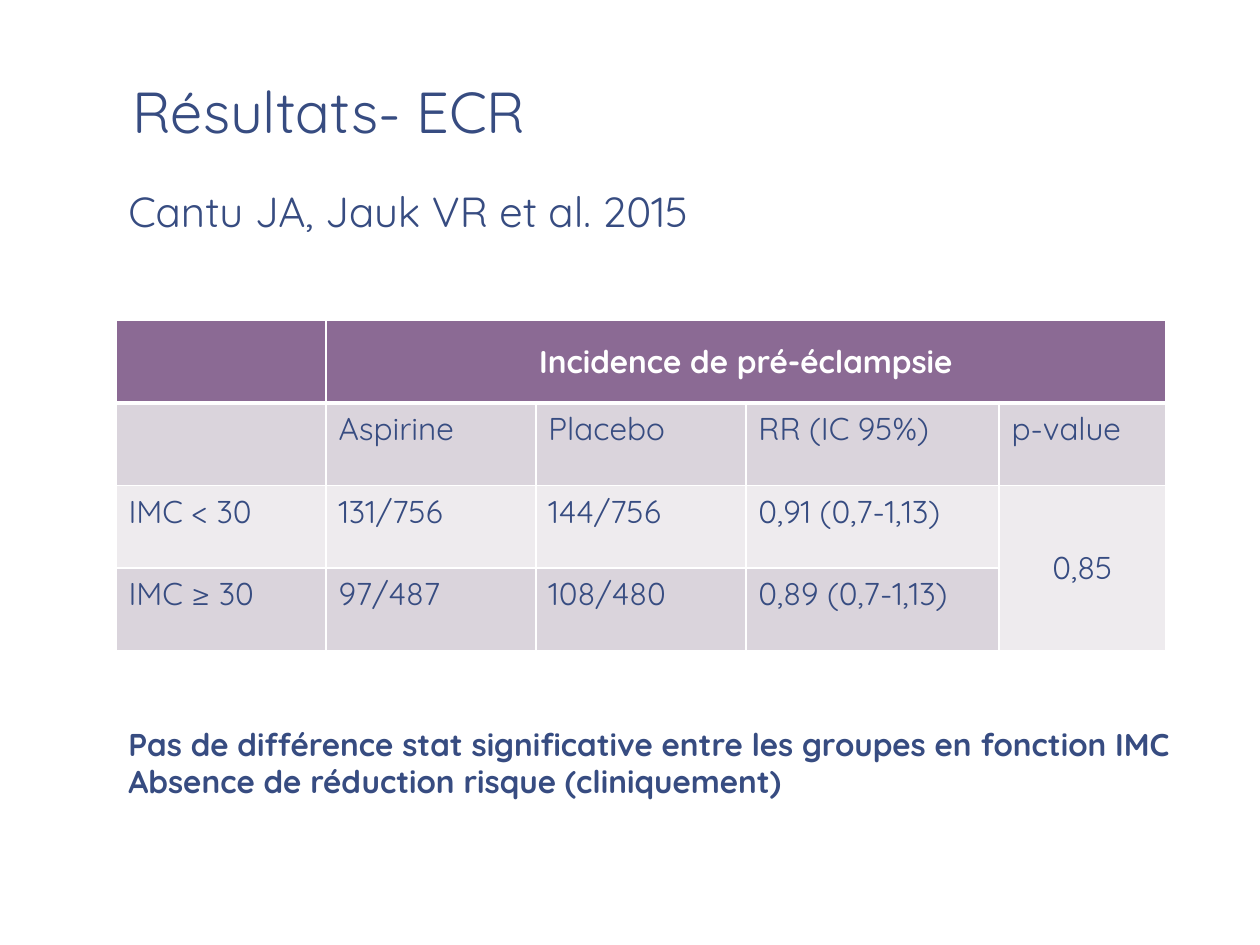
from lxml import etree
from pptx import Presentation
from pptx.dml.color import RGBColor
from pptx.enum import text
from pptx.oxml import ns
from pptx.util import Pt

COLORS = {"ink": "374C81", "white": "FFFFFF", "header": "8B6A94",
          "dark": "DAD4DC", "light": "EEEBEE"}
LEFT = 66.25


def write(frame, lines, size=18, color="ink", bold=False, **paragraph_format):
    for i, line in enumerate(lines):
        paragraph = frame.paragraphs[0] if i == 0 else frame.add_paragraph()
        paragraph.text = line
        for key, value in paragraph_format.items():
            setattr(paragraph, key, value)
        font = paragraph.runs[0].font
        for key, value in {"name": "Quicksand", "size": Pt(size), "bold": bold}.items():
            setattr(font, key, value)
        font.color.rgb = RGBColor.from_string(COLORS[color])


def add_border(cell, side, width):
    line = etree.Element(ns.qn(f"a:ln{side}"), w=str(Pt(width)))
    fill = etree.SubElement(line, ns.qn("a:solidFill"))
    etree.SubElement(fill, ns.qn("a:srgbClr"), val=COLORS["white"])
    cell._tc.get_or_add_tcPr().insert("LRTB".index(side), line)


prs = Presentation()
prs.slide_width, prs.slide_height = Pt(720), Pt(540)
slide = prs.slides.add_slide(prs.slide_layouts[6])

title = slide.shapes.add_textbox(Pt(LEFT), Pt(7.2), Pt(600), Pt(110)).text_frame
title_format = {"word_wrap": True, "vertical_anchor": text.MSO_ANCHOR.BOTTOM,
                "margin_left": Pt(9.5), "margin_right": Pt(9.5),
                "margin_top": Pt(5), "margin_bottom": Pt(40)}
for key, value in title_format.items():
    setattr(title, key, value)
write(title, ["Résultats- ECR"], size=33, line_spacing=0.85)

conclusion = slide.shapes.add_textbox(Pt(LEFT), Pt(410.5), Pt(613), Pt(51)).text_frame
conclusion.word_wrap = True
write(conclusion, ["Pas de différence stat significative entre les groupes en fonction IMC",
                   "Absence de réduction risque (cliniquement)"], bold=True)

study = slide.shapes.add_textbox(Pt(LEFT), Pt(102.5), Pt(451.5), Pt(36)).text_frame
study.word_wrap = True
write(study, ["Cantu JA, Jauk VR et al. 2015"], size=24)

rows = [
    ["", "Incidence de pré-éclampsie", "", "", ""],
    ["", "Aspirine", "Placebo", "RR (IC 95%)", "p-value"],
    ["IMC < 30", "131/756", "144/756", "0,91 (0,7-1,13)", "0,85"],
    ["IMC ≥ 30", "97/487", "108/480", "0,89 (0,7-1,13)", ""],
]
row_fills = ["header", "dark", "light", "dark"]
column_widths = [120, 120, 120, 144.7, 95.3]
row_height = 47.15

results = slide.shapes.add_table(len(rows), len(column_widths), Pt(LEFT), Pt(183.2),
                                 Pt(sum(column_widths)), Pt(row_height * len(rows))).table
results.first_row = results.horz_banding = False
for column, width in zip(results.columns, column_widths):
    column.width = Pt(width)
for row in results.rows:
    row.height = Pt(row_height)
results.cell(0, 1).merge(results.cell(0, 4))
results.cell(2, 4).merge(results.cell(3, 4))

for r, (values, fill) in enumerate(zip(rows, row_fills)):
    for c, value in enumerate(values):
        cell = results.cell(r, c)
        cell.fill.solid()
        cell.fill.fore_color.rgb = RGBColor.from_string(COLORS[fill])
        for side in "LRTB":
            under_header = (r, side) in [(0, "B"), (1, "T")]
            add_border(cell, side, 3 if under_header else 1)
        if not value:
            continue
        if cell.is_merge_origin:
            cell.vertical_anchor = text.MSO_ANCHOR.MIDDLE
        write(cell.text_frame, [value], color="white" if r == 0 else "ink", bold=r == 0,
              alignment=text.PP_ALIGN.CENTER if cell.is_merge_origin else text.PP_ALIGN.LEFT)

prs.save("out.pptx")
